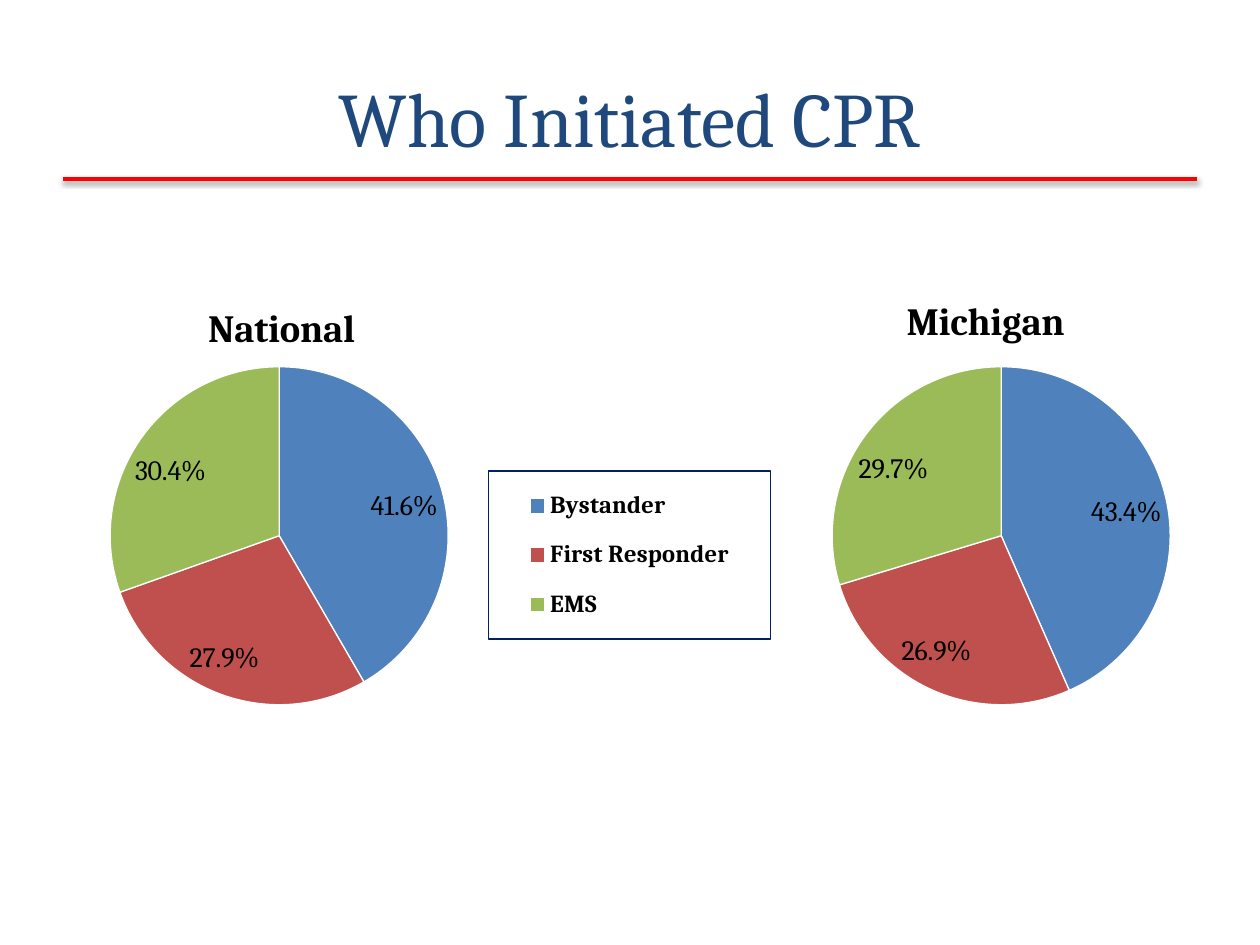
from lxml import etree
from pptx import Presentation
from pptx.chart.data import CategoryChartData
from pptx.dml.color import RGBColor
from pptx.enum.chart import XL_CHART_TYPE, XL_LABEL_POSITION, XL_LEGEND_POSITION
from pptx.enum.shapes import MSO_CONNECTOR
from pptx.enum.text import MSO_ANCHOR, PP_ALIGN
from pptx.oxml import parse_xml
from pptx.oxml.ns import qn
from pptx.util import Inches, Pt

PIE = XL_CHART_TYPE.PIE
BEST_FIT = XL_LABEL_POSITION.BEST_FIT
LEGEND_RIGHT = XL_LEGEND_POSITION.RIGHT
STRAIGHT = MSO_CONNECTOR.STRAIGHT
MIDDLE = MSO_ANCHOR.MIDDLE
CENTER = PP_ALIGN.CENTER

# Content
TITLE = "Who Initiated CPR"
CHARTS = [
    {"title": "National", "left": -0.09, "title_at": (0.27, 0.16),
     "categories": ["Bystander", "First Responder", "EMS"],
     "values": [41.6, 27.9, 30.4], "legend": True},
    {"title": "Michigan", "left": 5.64, "title_at": (0.24, 0.15),
     "categories": ["1", "2", "3"],
     "values": [43.4, 26.9, 29.7], "legend": False},
]
SLICE_COLORS = ["4F81BD", "C0504D", "9BBB59"]

# Format; chart layouts are fractions of the chart frame
FONT = "Cambria"
CHART_TOP, CHART_WIDTH, CHART_HEIGHT = 1.56, 6.25, 4.95
PLOT_LAYOUT = (0.095, 0.273, 0.548, 0.542)
LEGEND_LAYOUT = (0.635, 0.44, 0.358, 0.27)
SHADOW = (
    '<a:effectLst xmlns:a="http://schemas.openxmlformats.org/drawingml/2006/main">'
    '<a:outerShdw blurRad="39370" dist="20320" dir="5400000" rotWithShape="0">'
    '<a:srgbClr val="000000"><a:alpha val="38000"/></a:srgbClr>'
    '</a:outerShdw></a:effectLst>'
)


def rgb(color):
    return RGBColor.from_string(color)


def format_font(font, color="000000", **values):
    font.color.rgb = rgb(color)
    for name, value in {"name": FONT, **values}.items():
        setattr(font, name, value)


def set_layout(element, position, index, inner=False):
    """Place a chart part by x, y and, if given, width and height."""
    for old_layout in element.findall(qn("c:layout")):
        element.remove(old_layout)
    layout = etree.Element(qn("c:layout"))
    manual = etree.SubElement(layout, qn("c:manualLayout"))
    settings = [("layoutTarget", "inner")] if inner else []
    settings += [("xMode", "edge"), ("yMode", "edge")]
    settings += zip("xywh", position)
    for tag, value in settings:
        etree.SubElement(manual, qn(f"c:{tag}")).set("val", str(value))
    element.insert(index, layout)


def add_legend(chart):
    chart.has_legend = True
    legend = chart.legend
    legend.position = LEGEND_RIGHT
    legend.include_in_layout = False
    format_font(legend.font, size=Pt(14), bold=True)
    set_layout(legend._element, LEGEND_LAYOUT, 1)
    border = parse_xml(
        '<c:spPr xmlns:c="http://schemas.openxmlformats.org/drawingml/2006/chart" '
        'xmlns:a="http://schemas.openxmlformats.org/drawingml/2006/main">'
        '<a:ln w="12700"><a:solidFill><a:srgbClr val="002060"/></a:solidFill></a:ln>'
        '</c:spPr>')
    legend._element.find(qn("c:txPr")).addprevious(border)


def add_pie(slide, content):
    data = CategoryChartData()
    data.categories = content["categories"]
    data.add_series("Series 1", content["values"])
    chart = slide.shapes.add_chart(
        PIE, Inches(content["left"]), Inches(CHART_TOP),
        Inches(CHART_WIDTH), Inches(CHART_HEIGHT), data).chart
    format_font(chart.font, size=Pt(18))

    # Heading
    chart.has_title = True
    heading = chart.chart_title
    paragraph = heading.text_frame.paragraphs[0]
    run = paragraph.add_run()
    run.text = content["title"]
    format_font(run.font, size=Pt(22), bold=True)
    set_layout(heading._element, content["title_at"], 1)

    # Slices and labels
    plot = chart.plots[0]
    plot.vary_by_categories = True
    for index, color in enumerate(SLICE_COLORS):
        point_format = plot.series[0].points[index].format
        point_format.fill.solid()
        point_format.fill.fore_color.rgb = rgb(color)
        point_format.line.color.rgb = rgb("FFFFFF")
        point_format.line.width = Pt(0.75)
    labels = plot.series[0].data_labels
    format_font(labels.font, size=Pt(16))
    label_values = {"show_percentage": True, "show_value": False,
                    "number_format": "0.0%", "number_format_is_linked": False,
                    "position": BEST_FIT}
    for name, value in label_values.items():
        setattr(labels, name, value)
    set_layout(chart._chartSpace.chart.plotArea, PLOT_LAYOUT, 0, inner=True)

    chart.has_legend = False
    if content["legend"]:
        add_legend(chart)


presentation = Presentation()
presentation.slide_width, presentation.slide_height = Inches(10), Inches(7.5)
slide = presentation.slides.add_slide(presentation.slide_layouts[5])

# Title
title = slide.shapes.title
title.left, title.top, title.width, title.height = map(Inches, (0.5, 0.3, 9, 1.25))
title.text_frame.text = TITLE
title.text_frame.vertical_anchor = MIDDLE
paragraph = title.text_frame.paragraphs[0]
paragraph.alignment = CENTER
format_font(paragraph.runs[0].font, "1F497D", size=Pt(44))

# Rule under the title
rule = slide.shapes.add_connector(
    STRAIGHT, Inches(0.5), Inches(1.42), Inches(9.5), Inches(1.42))
rule.line.color.rgb = rgb("FF0000")
rule.line.width = Pt(2)
rule._element.spPr.append(parse_xml(SHADOW))

# Charts
for content in CHARTS:
    add_pie(slide, content)

presentation.save("out.pptx")
